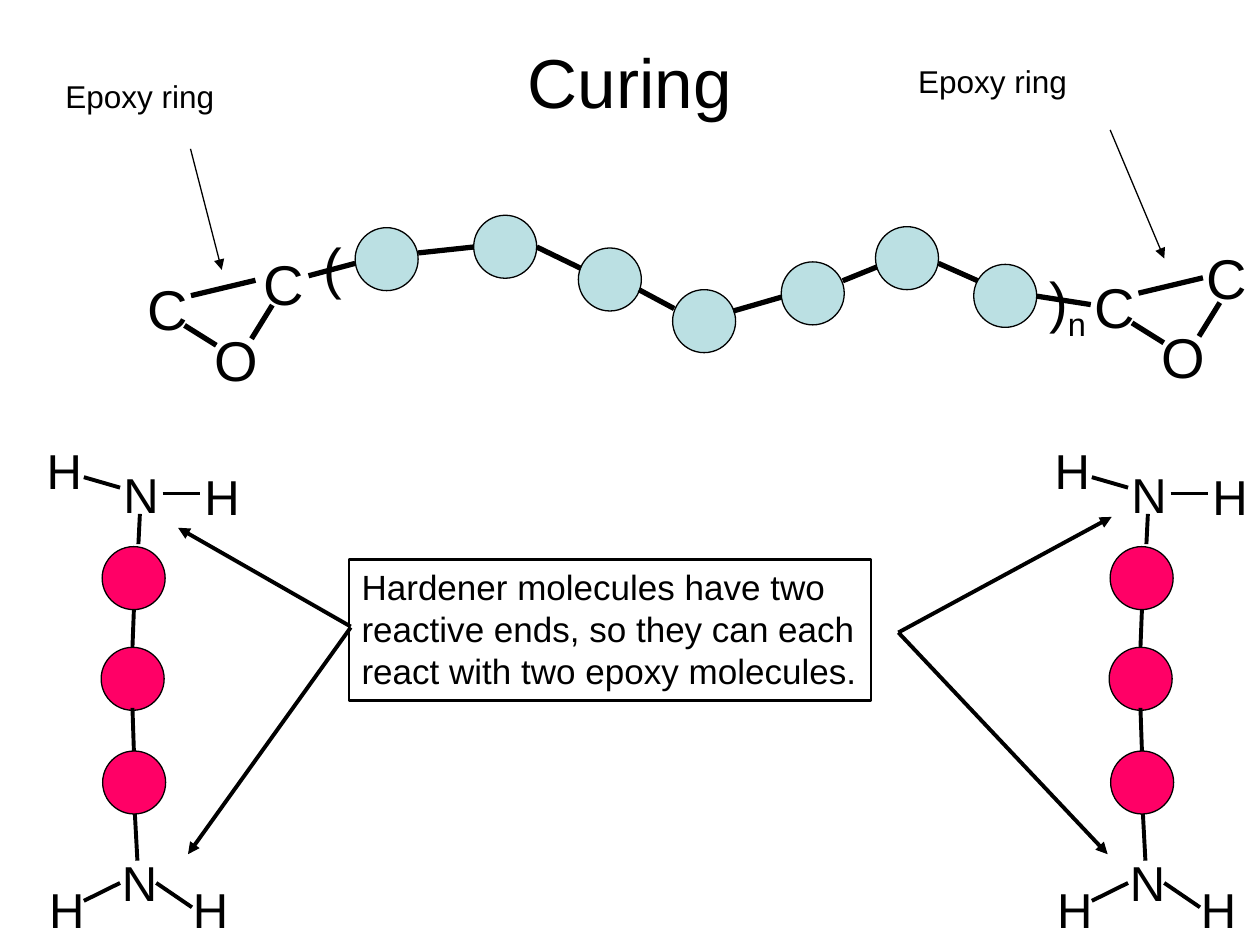
from dataclasses import dataclass

from lxml import etree
from pptx import Presentation
from pptx.dml.color import RGBColor
from pptx.enum.shapes import MSO_CONNECTOR, MSO_SHAPE
from pptx.enum.text import MSO_ANCHOR, MSO_AUTO_SIZE, PP_ALIGN
from pptx.oxml.ns import qn
from pptx.util import Cm, Pt

STRAIGHT = MSO_CONNECTOR.STRAIGHT
OVAL = MSO_SHAPE.OVAL
MIDDLE = MSO_ANCHOR.MIDDLE
GROW = MSO_AUTO_SIZE.SHAPE_TO_FIT_TEXT
FIXED = MSO_AUTO_SIZE.NONE
LEFT, CENTER = PP_ALIGN.LEFT, PP_ALIGN.CENTER


@dataclass(frozen=True)
class Theme:
    font: str = "Arial"
    ink: RGBColor = RGBColor(0, 0, 0)
    resin: RGBColor = RGBColor(0xBB, 0xE0, 0xE3)
    hardener: RGBColor = RGBColor(0xFF, 0x00, 0x66)
    title: float = 39.6
    resin_atom: int = 32
    hardener_atom: int = 28
    note: int = 20
    label: int = 18
    thin: float = 0.75
    border: float = 1.5
    medium: float = 2.25
    thick: float = 3


THEME = Theme()
BEAD = 1.27
RESIN_ATOM_SIZE = (1.35, 1.63)
HARDENER_ATOM_SIZE = (1.22, 1.45)


def add_text(slide, left, top, size, lines, points, wrap=False, align=LEFT):
    box = slide.shapes.add_textbox(Cm(left), Cm(top), Cm(size[0]), Cm(size[1]))
    frame = box.text_frame
    frame.text = "\n".join(lines)
    frame.word_wrap = wrap
    frame.auto_size = FIXED if wrap else GROW
    for paragraph in frame.paragraphs:
        paragraph.alignment = align
        style = {"name": THEME.font, "size": Pt(points)}
        for key, value in style.items():
            setattr(paragraph.font, key, value)
        paragraph.font.color.rgb = THEME.ink
    return box


def add_atoms(slide, left, top, size, points, atoms):
    for symbol, x, y in atoms:
        add_text(slide, left + x, top + y, size, [symbol], points)


def add_beads(slide, left, top, color, places):
    for x, y in places:
        bead = slide.shapes.add_shape(
            OVAL, Cm(left + x), Cm(top + y), Cm(BEAD), Cm(BEAD))
        bead.shadow.inherit = False
        bead.fill.solid()
        bead.fill.fore_color.rgb = color
        bead.line.color.rgb = THEME.ink
        bead.line.width = Pt(THEME.thin)


def add_lines(slide, left, top, width, ends, arrow=False):
    for x1, y1, x2, y2 in ends:
        line = slide.shapes.add_connector(
            STRAIGHT, Cm(left + x1), Cm(top + y1), Cm(left + x2), Cm(top + y2))
        line.line.color.rgb = THEME.ink
        line.line.width = Pt(width)
        properties = line._element.spPr
        if arrow:
            etree.SubElement(properties.find(qn("a:ln")), qn("a:tailEnd"), type="triangle")
        etree.SubElement(properties, qn("a:effectLst"))


def add_title(slide, left, top, size):
    title = add_text(slide, left, top, size, ["Curing"], THEME.title, True, CENTER)
    title.text_frame.vertical_anchor = MIDDLE


def add_epoxy_ring(slide, left, top, far_carbon):
    """Two carbons and an oxygen; left and top belong to the near carbon."""
    add_atoms(slide, left, top, RESIN_ATOM_SIZE, THEME.resin_atom,
              [("C", 0, 0), ("C", *far_carbon), ("O", 1.35, 1.02)])
    add_lines(slide, left, top, THEME.thick, [
        (1.13, 0.55, 2.43, 0.24),
        (1, 1.15, 1.64, 1.55),
        (2.77, 0.74, 2.35, 1.42),
    ])


def add_resin_chain(slide, left, top):
    add_beads(slide, left, top, THEME.resin, [
        (0.94, 0.25), (3.33, 0), (5.44, 0.66), (7.34, 1.5),
        (9.53, 0.94), (11.43, 0.23), (13.41, 0.99),
    ])
    add_lines(slide, left, top, THEME.thick, [
        (0, 1.22, 0.94, 0.97),
        (2.21, 0.76, 3.33, 0.64),
        (4.6, 0.64, 5.49, 1.07),
        (6.66, 1.5, 7.37, 1.88),
        (8.56, 1.93, 9.53, 1.65),
        (10.77, 1.32, 11.46, 1.04),
        (12.7, 0.97, 13.49, 1.32),
        (14.68, 1.63, 15.77, 1.8),
    ])
    add_text(slide, left + 0.05, top + 0.23, (0.89, 1.63), ["("], THEME.resin_atom)
    closing = add_text(slide, left + 14.68, top + 0.91, (1.27, 1.63), [")"], THEME.resin_atom)
    repeat = closing.text_frame.paragraphs[0].add_run()
    repeat.text = "n"
    repeat.font._element.set("baseline", "-25000")


def add_ring_label(slide, left, top, pointer):
    add_text(slide, left, top, (5.84, 1.6), ["Epoxy ring"], THEME.label, wrap=True)
    add_lines(slide, left, top, THEME.thin, [pointer], arrow=True)


def add_hardener(slide, left, top):
    """A three-bead molecule with an amine group at each end."""
    add_beads(slide, left, top, THEME.hardener,
              [(1.37, 2.26), (1.35, 4.29), (1.38, 6.38)])
    add_atoms(slide, left, top, HARDENER_ATOM_SIZE, THEME.hardener_atom, [
        ("H", 0, 0), ("N", 1.55, 0.48), ("H", 3.18, 0.51),
        ("H", 0.05, 8.84), ("N", 1.52, 8.31), ("H", 2.95, 8.84),
    ])
    add_lines(slide, left, top, THEME.medium, [
        (2.59, 1.19, 3.35, 1.19),
        (1.73, 1.07, 1, 0.86),
        (2.13, 1.6, 2.1, 2.21),
        (2.01, 3.53, 1.98, 4.29),
        (1.98, 5.51, 2.01, 6.38),
        (2.03, 7.65, 2.08, 8.59),
        (1.73, 9.04, 1, 9.4),
        (2.46, 9.04, 3.18, 9.53),
    ])


def add_hardener_note(slide, left, top, size):
    note = add_text(slide, left, top, size, [
        "Hardener molecules have two",
        "reactive ends, so they can each",
        "react with two epoxy molecules.",
    ], THEME.note)
    note.line.color.rgb = THEME.ink
    note.line.width = Pt(THEME.border)
    for paragraph in note.text_frame.paragraphs:
        paragraph.line_spacing = Pt(24)
    add_lines(slide, left, top, THEME.medium, [
        (0.03, 1.35, -3.45, -0.64),
        (0.03, 1.37, -3.25, 5.94),
        (11.07, 1.47, 15.37, -0.86),
        (11.07, 1.47, 15.29, 5.94),
    ], arrow=True)


def main():
    deck = Presentation()
    deck.slide_width, deck.slide_height = Cm(25.4), Cm(19.05)
    slide = deck.slides.add_slide(deck.slide_layouts[6])

    add_title(slide, 1.27, 0.76, (22.86, 1.75))
    add_resin_chain(slide, 6.22, 4.34)
    add_epoxy_ring(slide, 2.72, 5.41, far_carbon=(2.34, -0.51))
    add_epoxy_ring(slide, 21.82, 5.36, far_carbon=(2.26, -0.58))
    add_ring_label(slide, 1.07, 1.42, pointer=(2.77, 1.58, 3.4, 4.02))
    add_ring_label(slide, 18.26, 1.12, pointer=(4.12, 1.5, 5.21, 4.09))
    for left in (0.69, 21.01):
        add_hardener(slide, left, 8.76)
    add_hardener_note(slide, 7.04, 11.28, (10.52, 2.84))

    deck.save("out.pptx")


if __name__ == "__main__":
    main()
